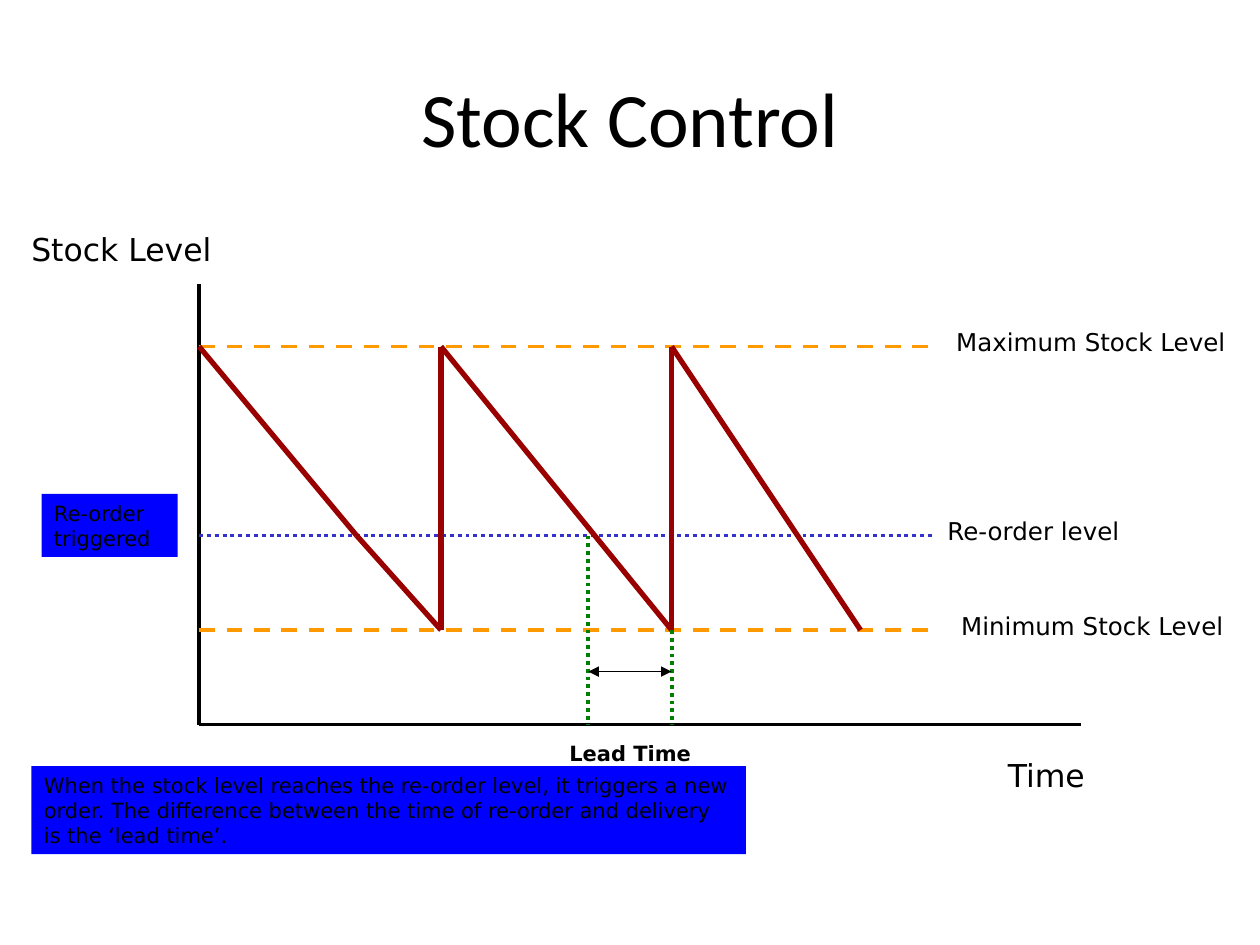
from itertools import pairwise

from lxml import etree
from pptx import Presentation
from pptx import util as u
from pptx.dml.color import RGBColor
from pptx.enum import dml, shapes, text
from pptx.oxml.ns import qn

COLORS = {
    "ink": "000000",
    "limit": "FF9900",
    "reorder": "3333CC",
    "stock": "990000",
    "lead": "008000",
    "note": "0000FF",
}
DASH = dml.MSO_LINE.DASH
DOTS = dml.MSO_LINE.ROUND_DOT  # stored as sysDot


class StockSlide:
    """Holds the style and the slide being drawn."""

    title_font = "Calibri"
    body_font = "DejaVu Sans"

    def __init__(self, deck):
        self.page = deck.slides.add_slide(deck.slide_layouts[6])

    def color(self, name):
        return RGBColor.from_string(COLORS[name])

    def add_words(self, box, words, size, font=None, bold=False, wrap=True,
                  align=text.PP_ALIGN.LEFT, anchor=text.MSO_ANCHOR.TOP):
        frame = box.text_frame
        frame.word_wrap = wrap
        frame.vertical_anchor = anchor
        para = frame.paragraphs[0]
        para.alignment = align
        span = para.add_run()
        span.text = words
        span.font.name = font or self.body_font
        span.font.size = u.Pt(size)
        span.font.bold = bold
        span.font.color.rgb = self.color("ink")

    def label(self, words, left, top, width, height, size, **style):
        box = self.page.shapes.add_textbox(
            *map(u.Inches, (left, top, width, height)))
        self.add_words(box, words, size, **style)

    def title(self, words):
        self.label(words, 0.5, 0.3, 9, 1.25, 44, font=self.title_font,
                   align=text.PP_ALIGN.CENTER, anchor=text.MSO_ANCHOR.MIDDLE)

    def note(self, words, left, top, width, height):
        box = self.page.shapes.add_shape(
            shapes.MSO_SHAPE.RECTANGLE,
            *map(u.Inches, (left, top, width, height)))
        box.shadow.inherit = False
        box.fill.solid()
        box.fill.fore_color.rgb = self.color("note")
        box.line.fill.background()
        self.add_words(box, words, 12)

    def line(self, start, end, color, width=2.25, dash=None, arrows=False):
        line = self.page.shapes.add_connector(
            shapes.MSO_CONNECTOR.STRAIGHT, *map(u.Inches, (*start, *end)))
        line.line.color.rgb = self.color(color)
        line.line.width = u.Pt(width)
        if dash:
            line.line.dash_style = dash
        properties = line._element.spPr
        if arrows:
            outline = properties.find(qn("a:ln"))
            for side in ("a:headEnd", "a:tailEnd"):
                etree.SubElement(outline, qn(side), type="triangle")
        etree.SubElement(properties, qn("a:effectLst"))

    def zigzag(self, points, color, width):
        for start, end in pairwise(points):
            self.line(start, end, color, width)


def main():
    deck = Presentation()
    deck.slide_width, deck.slide_height = u.Inches(10), u.Inches(7.5)
    slide = StockSlide(deck)
    slide.title("Stock Control")

    # Heights and times shared by the parts of the diagram
    maximum, reorder, minimum, base = 2.75, 4.25, 5, 5.75
    origin, level_end = 1.58, 7.42
    first_delivery, second_delivery = 3.5, 5.33
    order_time = 4.67

    # Axes
    slide.line((origin, 2.25), (origin, base), "ink")
    slide.line((origin, base), (8.58, base), "ink")
    slide.label("Stock Level", 0.15, 1.78, 1.64, 0.4, 18, wrap=False)
    slide.label("Time", 7.9, 5.95, 0.82, 0.4, 18, wrap=False)

    # Stock levels, each with its label
    levels = [
        ("Maximum Stock Level", maximum, "limit", DASH, 7.49, 2.34),
        ("Minimum Stock Level", minimum, "limit", DASH, 7.53, 2.28),
        ("Re-order level", reorder, "reorder", DOTS, 7.42, 1.59),
    ]
    for words, height, color, dash, left, width in levels:
        slide.line((origin, height), (level_end, height), color, dash=dash)
        slide.label(words, left, height - 0.2, width, 0.33, 14, wrap=False)

    # Stock running down and being refilled
    slide.zigzag([
        (origin, maximum), (2.83, reorder), (first_delivery, minimum),
        (first_delivery, maximum), (second_delivery, minimum),
        (second_delivery, maximum), (6.83, minimum),
    ], "stock", 3)

    # Lead time between order and delivery
    for time, top in ((order_time, reorder), (second_delivery, minimum)):
        slide.line((time, top), (time, base), "lead", dash=DOTS)
    slide.line((order_time, 5.33), (second_delivery, 5.33), "ink", 0.75,
               arrows=True)
    slide.label("Lead Time", 4.42, 5.83, 1.25, 0.3, 12, bold=True)

    # Notes
    slide.note("When the stock level reaches the re-order level, it triggers "
               "a new order. The difference between the time of re-order and "
               "delivery is the ‘lead time’.", 0.25, 6.08, 5.67, 0.7)
    slide.note("Re-order triggered", 0.33, 3.92, 1.08, 0.5)

    deck.save("out.pptx")


if __name__ == "__main__":
    main()
